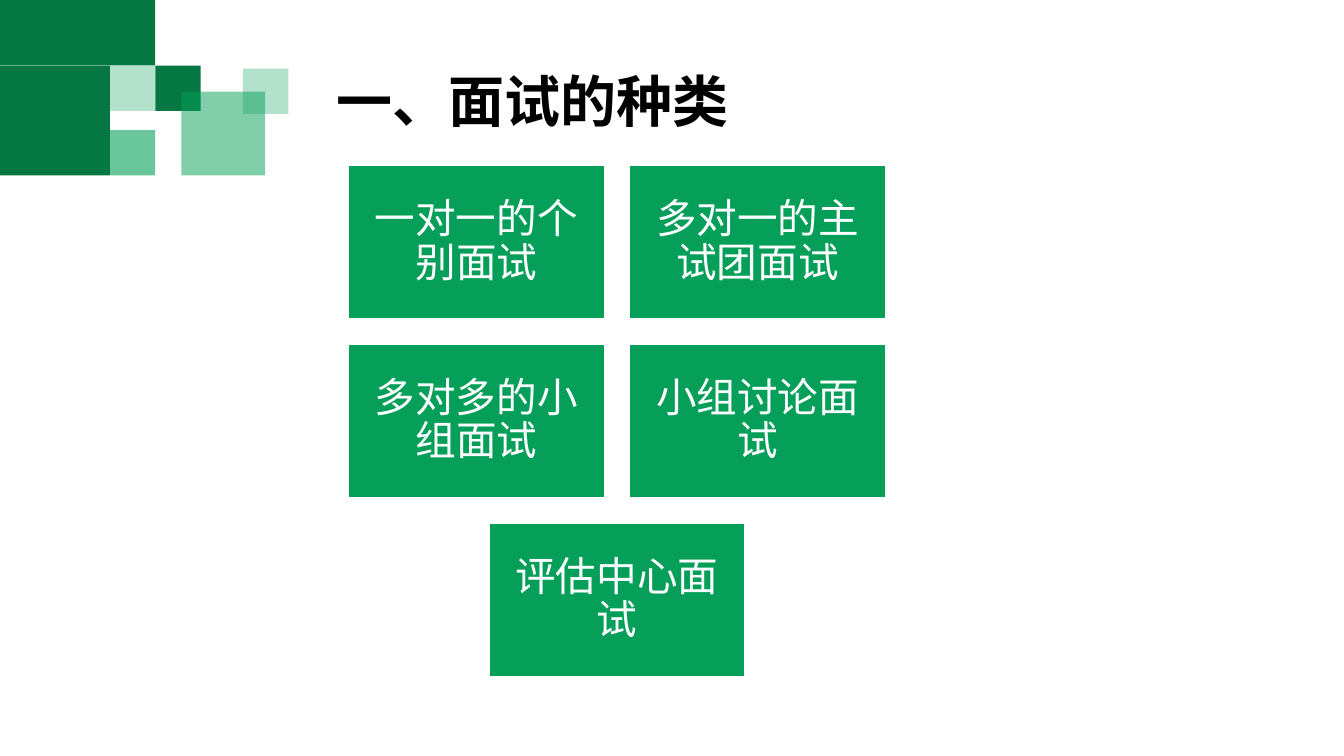
"""Build a slide that lists the kinds of job interview in a grid of tiles."""
import dataclasses

import lxml.etree
import pptx
import pptx.dml.color
import pptx.enum.shapes
import pptx.enum.text
import pptx.oxml.ns
import pptx.util

Inches = pptx.util.Inches
ANCHOR = pptx.enum.text.MSO_ANCHOR
ALIGN = pptx.enum.text.PP_ALIGN


@dataclasses.dataclass(frozen=True)
class Theme:
    dark: str = "047743"
    green: str = "059F59"
    white: str = "FFFFFF"
    black: str = "000000"
    font: str = "Calibri"
    title_size: int = 40
    tile_size: int = 29


THEME = Theme()

MOSAIC = [
    (0, 0.65, 1.09, 1.09, THEME.dark, 100),
    (0, 0, 1.54, 0.65, THEME.dark, 100),
    (1.09, 0.65, 0.45, 0.45, THEME.green, 30),
    (1.54, 0.65, 0.45, 0.45, THEME.dark, 100),
    (1.09, 1.29, 0.45, 0.45, THEME.green, 60),
    (1.8, 0.91, 0.83, 0.83, THEME.green, 50),
    (2.41, 0.68, 0.45, 0.45, THEME.green, 30),
]

TILE_ROWS = [
    ["一对一的个别面试", "多对一的主试团面试"],
    ["多对多的小组面试", "小组讨论面试"],
    ["评估中心面试"],
]
TILE_WIDTH, TILE_HEIGHT = 2.54, 1.52
STEP_X, STEP_Y = 2.79, 1.775
GRID_CENTRE, GRID_TOP = 6.12, 1.64


def apply_format(target, values):
    for name, value in values.items():
        setattr(target, name, value)


def rgb(colour):
    return pptx.dml.color.RGBColor.from_string(colour)


def write_text(shape, text, frame_format, para_format, font_format, colour):
    frame = shape.text_frame
    apply_format(frame, frame_format)
    para = frame.paragraphs[0]
    apply_format(para, para_format)
    span = para.add_run()
    span.text = text
    apply_format(span.font, {"name": THEME.font, **font_format})
    span.font.color.rgb = rgb(colour)


def add_block(page, left, top, width, height, colour, opacity=100):
    block = page.shapes.add_shape(
        pptx.enum.shapes.MSO_SHAPE.RECTANGLE,
        Inches(left), Inches(top), Inches(width), Inches(height))
    block.shadow.inherit = False
    block.fill.solid()
    block.fill.fore_color.rgb = rgb(colour)
    block.line.fill.background()
    if opacity < 100:
        tint = block.fill._xPr.find(".//" + pptx.oxml.ns.qn("a:srgbClr"))
        alpha = lxml.etree.SubElement(tint, pptx.oxml.ns.qn("a:alpha"))
        alpha.set("val", str(opacity * 1000))
    return block


def add_tile(page, left, top, text):
    tile = add_block(page, left, top, TILE_WIDTH, TILE_HEIGHT, THEME.green)
    tile.line.color.rgb = rgb(THEME.white)
    tile.line.width = pptx.util.Pt(1)
    margins = {f"margin_{side}": Inches(0.12)
               for side in ("left", "top", "right", "bottom")}
    write_text(
        tile, text,
        {"word_wrap": True, "vertical_anchor": ANCHOR.MIDDLE, **margins},
        {"alignment": ALIGN.CENTER, "line_spacing": 0.9},
        {"size": pptx.util.Pt(THEME.tile_size)}, THEME.white)


def add_tile_grid(page):
    for row, labels in enumerate(TILE_ROWS):
        row_width = (len(labels) - 1) * STEP_X + TILE_WIDTH
        left = GRID_CENTRE - row_width / 2
        for column, label in enumerate(labels):
            add_tile(page, left + column * STEP_X,
                     GRID_TOP + row * STEP_Y, label)


def set_title(page, text):
    title = page.shapes.title
    apply_format(title, {"left": Inches(3.24), "top": Inches(0.69),
                         "width": Inches(4.33), "height": Inches(1.27)})
    write_text(
        title, text,
        {"word_wrap": True, "vertical_anchor": ANCHOR.TOP,
         "auto_size": pptx.enum.text.MSO_AUTO_SIZE.SHAPE_TO_FIT_TEXT},
        {"alignment": ALIGN.LEFT, "line_spacing": 0.9,
         "space_before": pptx.util.Pt(10)},
        {"size": pptx.util.Pt(THEME.title_size), "bold": True}, THEME.black)


def main():
    deck = pptx.Presentation()
    apply_format(deck, {"slide_width": Inches(13.33),
                        "slide_height": Inches(7.5)})
    page = deck.slides.add_slide(deck.slide_layouts.get_by_name("Title Only"))
    set_title(page, "一、面试的种类")
    for piece in MOSAIC:
        add_block(page, *piece)
    add_tile_grid(page)
    deck.save("out.pptx")


if __name__ == "__main__":
    main()
